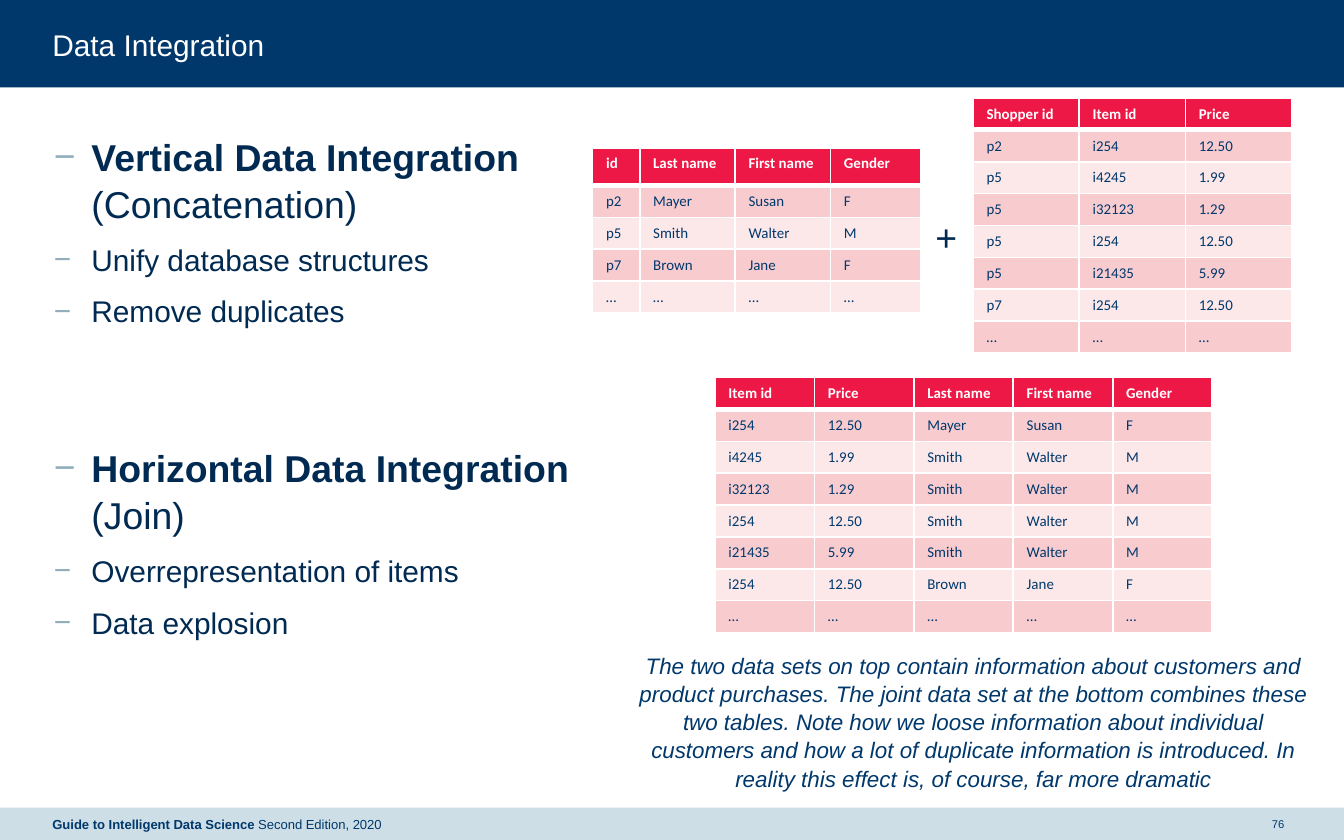
"""Build the Data Integration slide with its source tables and their join."""
from dataclasses import dataclass

from lxml import etree
from pptx import Presentation
from pptx import util as u
from pptx.dml.color import RGBColor
from pptx.enum import shapes, text
from pptx.oxml import ns


@dataclass(frozen=True)
class Theme:
    navy: str = "00386C"
    ink: str = "002A51"
    pale: str = "CDDEE7"
    bullet: str = "92AEBC"
    white: str = "FFFFFF"
    red: str = "ED1846"
    bands: tuple = ("F8CCCF", "FCE8E9")
    sans: str = "Arial"
    table_font: str = "Calibri"
    heading: int = 20
    body: int = 16
    caption: int = 12
    cell: int = 8
    footer: int = 7
    page: int = 6
    line_spacing: float = 1.05
    gap: float = 7.5
    section_gap: float = 61


THEME = Theme()
POINTS = [
    ("Vertical Data Integration ", "(Concatenation)", THEME.gap),
    ("", "Unify database structures", THEME.gap),
    ("", "Remove duplicates", THEME.gap),
    ("Horizontal Data Integration ", "(Join)", THEME.section_gap),
    ("", "Overrepresentation of items", THEME.gap),
    ("", "Data explosion", THEME.gap),
]
CAPTION = (
    "The two data sets on top contain information about customers and product purchases. "
    "The joint data set at the bottom combines these two tables. Note how we loose information "
    "about individual customers and how a lot of duplicate information is introduced. "
    "In reality this effect is, of course, far more dramatic"
)
CUSTOMERS = [
    ("id", "Last name", "First name", "Gender"),
    ("p2", "Mayer", "Susan", "F"),
    ("p5", "Smith", "Walter", "M"),
    ("p7", "Brown", "Jane", "F"),
    ("…",) * 4,
]
PURCHASES = [
    ("Shopper id", "Item id", "Price"),
    ("p2", "i254", "12.50"),
    ("p5", "i4245", "1.99"),
    ("p5", "i32123", "1.29"),
    ("p5", "i254", "12.50"),
    ("p5", "i21435", "5.99"),
    ("p7", "i254", "12.50"),
    ("…",) * 3,
]


def join_tables(customers, purchases):
    """Return the purchases with the customer columns in place of the shopper id."""
    people = {row[0]: row[1:] for row in customers}
    header = purchases[0][1:] + customers[0][1:]
    return [header] + [row[1:] + people[row[0]] for row in purchases[1:]]


def place(shape, left, top, width, height):
    """Move and size a shape in inches."""
    shape.left, shape.top = u.Inches(left), u.Inches(top)
    shape.width, shape.height = u.Inches(width), u.Inches(height)


def write_text(paragraph, words, size=THEME.body, color=THEME.navy, font=THEME.sans,
               bold=False, italic=False, align=text.PP_ALIGN.LEFT):
    """Add a formatted run to a paragraph."""
    paragraph.alignment = align
    run = paragraph.add_run()
    run.text = words
    run.font.size, run.font.name = u.Pt(size), font
    run.font.bold, run.font.italic = bold, italic
    run.font.color.rgb = RGBColor.from_string(color)


def prepare_frame(shape, anchor=text.MSO_ANCHOR.TOP, wrap=True):
    """Clear the margins of a text frame and return its first paragraph."""
    frame = shape.text_frame
    frame.margin_left = frame.margin_right = frame.margin_top = frame.margin_bottom = 0
    frame.auto_size = text.MSO_AUTO_SIZE.NONE
    frame.word_wrap, frame.vertical_anchor = wrap, anchor
    paragraph = frame.paragraphs[0]
    paragraph.line_spacing = THEME.line_spacing
    return paragraph


def add_box(slide, box, color):
    """Add a plain filled rectangle."""
    shape = slide.shapes.add_shape(shapes.MSO_SHAPE.RECTANGLE, *map(u.Inches, box))
    shape.shadow.inherit = False
    shape.fill.solid()
    shape.fill.fore_color.rgb = RGBColor.from_string(color)
    shape.line.fill.background()
    return shape


def add_band(slide, box, color):
    """Add a rectangle behind everything else on the slide."""
    band = add_box(slide, box, color)
    slide.shapes._spTree.insert(2, band._element)


def add_label(slide, box):
    """Add a vertically centred text box and return its paragraph."""
    label = slide.shapes.add_textbox(*map(u.Inches, box))
    return prepare_frame(label, text.MSO_ANCHOR.MIDDLE)


def set_bullet(paragraph):
    """Give a paragraph a hanging dash bullet."""
    properties = paragraph._p.get_or_add_pPr()
    properties.set("marL", str(u.Inches(0.29)))
    properties.set("indent", str(u.Inches(-0.28)))
    color = etree.SubElement(properties, ns.qn("a:buClr"))
    etree.SubElement(color, ns.qn("a:srgbClr"), val=THEME.bullet)
    etree.SubElement(properties, ns.qn("a:buFont"), typeface=THEME.sans)
    etree.SubElement(properties, ns.qn("a:buChar"), char="−")


def fill_points(body):
    """Write the bulleted points into the body placeholder."""
    first = prepare_frame(body)
    for index, (heading, words, gap) in enumerate(POINTS):
        paragraph = body.text_frame.add_paragraph() if index else first
        paragraph.line_spacing, paragraph.space_before = THEME.line_spacing, u.Pt(gap)
        size = THEME.heading if heading else THEME.body
        if heading:
            write_text(paragraph, heading, size=size, color=THEME.ink, bold=True)
        write_text(paragraph, words, size=size, color=THEME.ink)
        set_bullet(paragraph)


def set_borders(cell, top, bottom):
    """Draw white cell borders with the given top and bottom widths in points."""
    properties = cell._tc.get_or_add_tcPr()
    for side, width in (("L", 1), ("R", 1), ("T", top), ("B", bottom)):
        line = etree.SubElement(properties, ns.qn(f"a:ln{side}"), w=str(u.Pt(width)))
        fill = etree.SubElement(line, ns.qn("a:solidFill"))
        etree.SubElement(fill, ns.qn("a:srgbClr"), val=THEME.white)


def add_data_table(slide, rows, left, top, widths, header_height=0.23, row_height=0.23):
    """Add a banded table with a red header row."""
    height = header_height + row_height * (len(rows) - 1)
    box = map(u.Inches, (left, top, sum(widths), height))
    table = slide.shapes.add_table(len(rows), len(widths), *box).table
    for column, width in zip(table.columns, widths):
        column.width = u.Inches(width)
    for index, values in enumerate(rows):
        header = index == 0
        table.rows[index].height = u.Inches(header_height if header else row_height)
        background = THEME.red if header else THEME.bands[(index - 1) % 2]
        for cell, value in zip(table.rows[index].cells, values):
            set_borders(cell, 3 if index == 1 else 1, 3 if header else 1)
            cell.fill.solid()
            cell.fill.fore_color.rgb = RGBColor.from_string(background)
            write_text(cell.text_frame.paragraphs[0], value, size=THEME.cell, bold=header,
                       font=THEME.table_font, color=THEME.white if header else THEME.navy)


def main():
    """Build and save the slide."""
    presentation = Presentation()
    presentation.slide_width, presentation.slide_height = u.Inches(10), u.Inches(6.25)
    slide = presentation.slides.add_slide(presentation.slide_layouts[1])
    title, body = slide.placeholders
    add_band(slide, (0, 0, 10, 0.65), THEME.navy)
    add_band(slide, (0, 6.01, 10, 0.24), THEME.pale)

    place(title, 0.39, 0.19, 9.22, 0.27)
    write_text(prepare_frame(title, text.MSO_ANCHOR.MIDDLE), "Data Integration", color=THEME.white)
    place(body, 0.39, 0.98, 4.39, 4.7)
    fill_points(body)

    footer = add_label(slide, (0.39, 6.01, 4.39, 0.24))
    write_text(footer, "Guide to Intelligent Data Science ", size=THEME.footer, bold=True)
    write_text(footer, "Second Edition, 2020", size=THEME.footer)
    page = add_label(slide, (9.41, 6.01, 0.2, 0.24))
    write_text(page, "76", size=THEME.page, align=text.PP_ALIGN.CENTER)

    caption = add_box(slide, (4.7, 4.84, 5.09, 1.01), THEME.white)
    write_text(prepare_frame(caption), CAPTION, size=THEME.caption, italic=True,
               align=text.PP_ALIGN.CENTER)
    add_data_table(slide, CUSTOMERS, 4.41, 1.1, (0.35, 0.71, 0.71, 0.67), header_height=0.28)
    add_data_table(slide, PURCHASES, 7.24, 0.73, (0.79,) * 3)
    add_data_table(slide, join_tables(CUSTOMERS, PURCHASES), 5.32, 2.81, (0.74,) * 5)
    plus = add_box(slide, (6.96, 1.58, 0.18, 0.33), THEME.white)
    write_text(prepare_frame(plus, wrap=False), "+", size=THEME.heading, color=THEME.ink)
    presentation.save("out.pptx")


if __name__ == "__main__":
    main()
